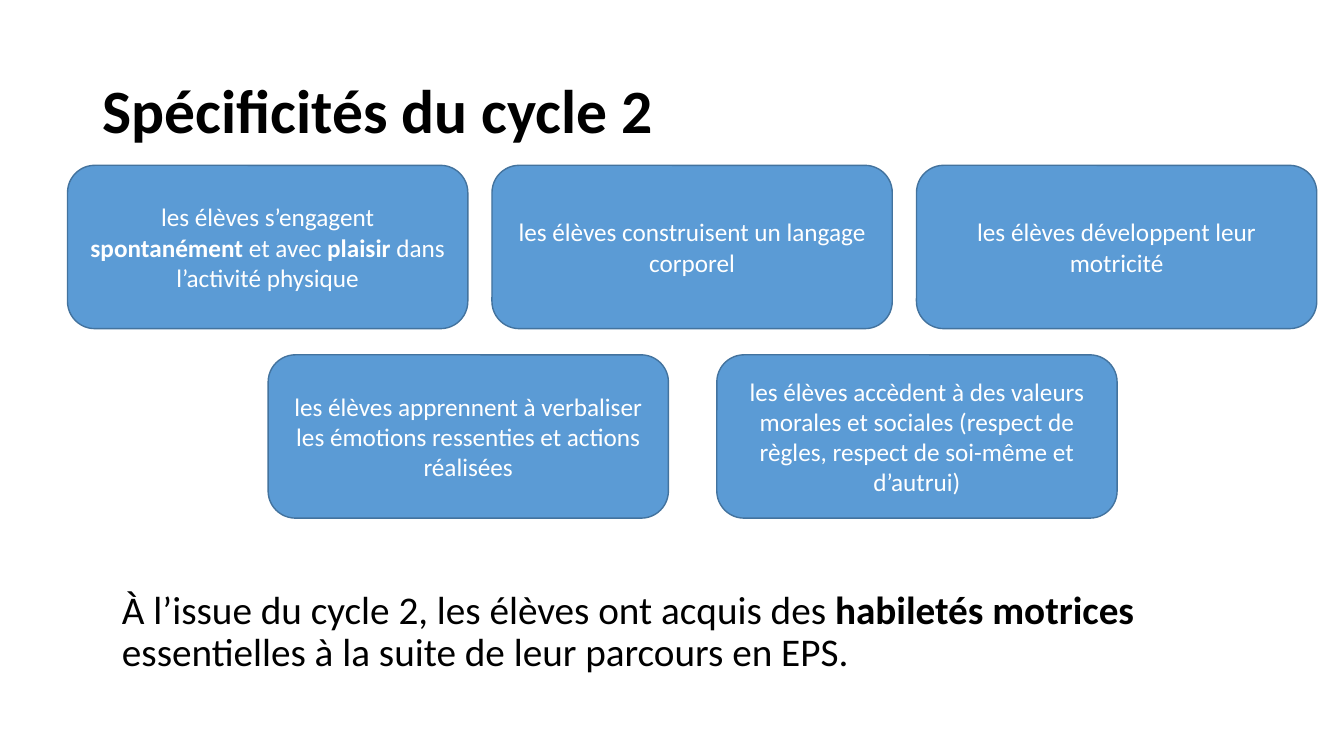
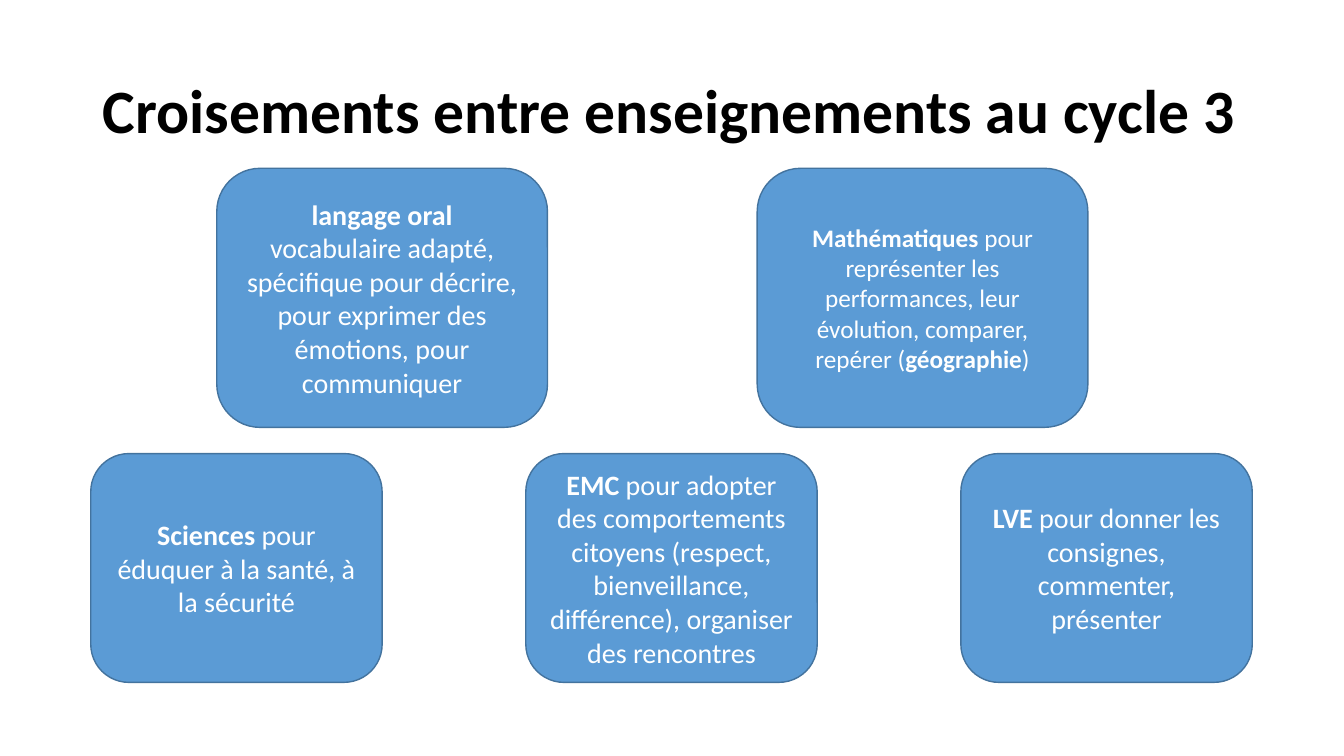
from pptx import Presentation
from pptx.dml.color import RGBColor
from pptx.enum.shapes import MSO_SHAPE as SHAPE
from pptx.enum.text import MSO_ANCHOR as ANCHOR, MSO_AUTO_SIZE as AUTO_SIZE, PP_ALIGN as ALIGN
from pptx.util import Inches, Pt
from lxml import etree

BLUE = RGBColor(0x5B, 0x9B, 0xD5)
DARK_BLUE = RGBColor(0x43, 0x73, 0x9E)
WHITE = RGBColor(0xFF, 0xFF, 0xFF)
BLACK = RGBColor(0x00, 0x00, 0x00)
FONT = "Calibri"
TITLE_ONLY, TITLE_AND_BODY = 5, 1
DRAWING = "{http://schemas.openxmlformats.org/drawingml/2006/main}"


def write(shape, text, size, color, align, anchor, spacing=1.0, before=0):
    """Fill a shape with text: one paragraph per line, bold between asterisks."""
    frame = shape.text_frame
    frame.word_wrap = True
    frame.auto_size = AUTO_SIZE.NONE
    frame.vertical_anchor = anchor
    for number, line in enumerate(text.split("\n")):
        para = frame.add_paragraph() if number else frame.paragraphs[0]
        para.alignment = align
        para.line_spacing = spacing
        para.space_before = Pt(before)
        para.font.name = FONT
        para.font.size = Pt(size)
        para.font.color.rgb = color
        for position, part in enumerate(line.split("*")):
            if part:
                span = para.add_run()
                span.text = part
                span.font.bold = position % 2 == 1


def place(shape, left, top, width, height):
    shape.left, shape.top = Inches(left), Inches(top)
    shape.width, shape.height = Inches(width), Inches(height)


# Each row of boxes: left, top, width, height, step, then (text, size) pairs
CYCLE_2_ROWS = [
    (0.67, 1.64, 3.97, 1.62, 4.21, [
        ("les élèves s’engagent *spontanément* et avec *plaisir* dans l’activité physique", 18),
        ("les élèves construisent un langage corporel", 18),
        ("les élèves développent leur motricité", 18),
    ]),
    (2.66, 3.52, 3.97, 1.62, 4.45, [
        ("les élèves apprennent à verbaliser les émotions ressenties et actions réalisées", 18),
        ("les élèves accèdent à des valeurs morales et sociales "
         "(respect de règles, respect de soi-même et d’autrui)", 18),
    ]),
]
CYCLE_3_ROWS = [
    (2.15, 1.67, 3.28, 2.57, 5.36, [
        ("*langage oral*\nvocabulaire adapté, spécifique pour décrire, "
         "pour exprimer des émotions, pour communiquer", 20),
        ("*Mathématiques* pour représenter les performances, leur évolution, "
         "comparer, repérer (*géographie*)", 18),
    ]),
    (0.9, 4.5, 2.89, 2.27, 4.315, [
        ("*Sciences* pour éduquer à la santé, à la sécurité", 20),
        ("*EMC* pour adopter des comportements citoyens "
         "(respect, bienveillance, différence), organiser des rencontres", 20),
        ("*LVE* pour donner les consignes, commenter, présenter", 20),
    ]),
]
CYCLE_2_SUMMARY = ("À l’issue du cycle 2, les élèves ont acquis des *habiletés motrices *"
                   "essentielles à la suite de leur parcours en EPS.")
PAGES = [
    ("Spécificités du cycle 2", CYCLE_2_SUMMARY, CYCLE_2_ROWS),
    ("Croisements entre enseignements au cycle 3", None, CYCLE_3_ROWS),
]

deck = Presentation()
deck.slide_width, deck.slide_height = Inches(13.33), Inches(7.5)

for title, summary, rows in PAGES:
    layout = TITLE_AND_BODY if summary else TITLE_ONLY
    page = deck.slides.add_slide(deck.slide_layouts[layout])

    # Title
    heading = page.shapes.title
    place(heading, 0.92, 0.4, 11.5, 1.45)
    write(heading, f"*{title}*", 44, BLACK, ALIGN.LEFT, ANCHOR.MIDDLE, 0.9)

    # Summary sentence, without bullet
    if summary:
        body = page.placeholders[1]
        place(body, 1.11, 5.81, 11.5, 1)
        write(body, summary, 28, BLACK, ALIGN.LEFT, ANCHOR.TOP, 0.9, 10)
        for para in body.text_frame.paragraphs:
            properties = para._p.get_or_add_pPr()
            properties.set("marL", "0")
            properties.set("indent", "0")
            properties.insert_element_before(
                etree.Element(DRAWING + "buNone"), "a:tabLst", "a:defRPr", "a:extLst")

    # Rows of rounded boxes
    for left, top, width, height, step, boxes in rows:
        for column, (text, size) in enumerate(boxes):
            box = page.shapes.add_shape(SHAPE.ROUNDED_RECTANGLE, 0, 0, 0, 0)
            place(box, left + column * step, top, width, height)
            box.shadow.inherit = False
            box.fill.solid()
            box.fill.fore_color.rgb = BLUE
            box.line.color.rgb = DARK_BLUE
            box.line.width = Pt(1)
            write(box, text, size, WHITE, ALIGN.CENTER, ANCHOR.MIDDLE)

deck.save("out.pptx")
